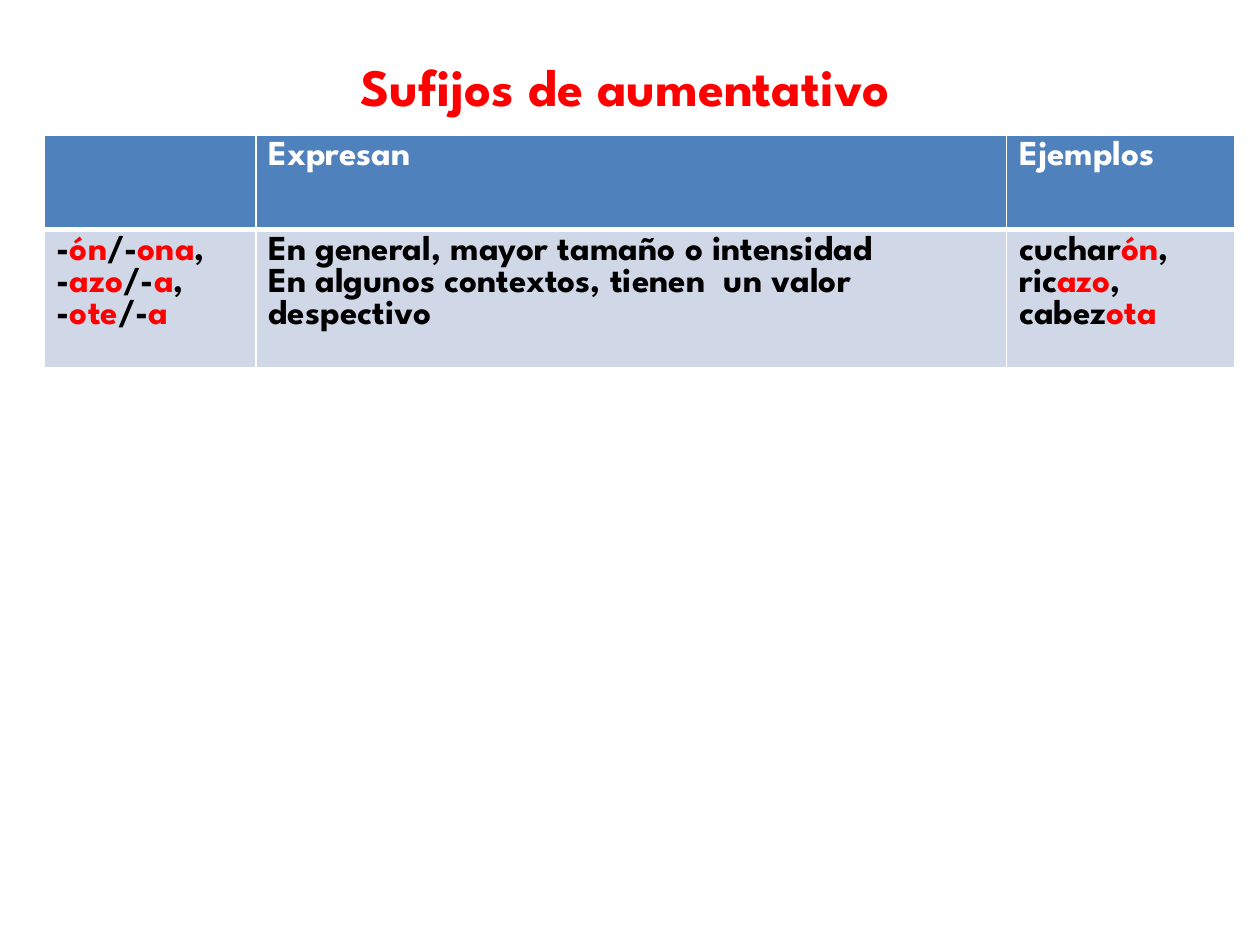
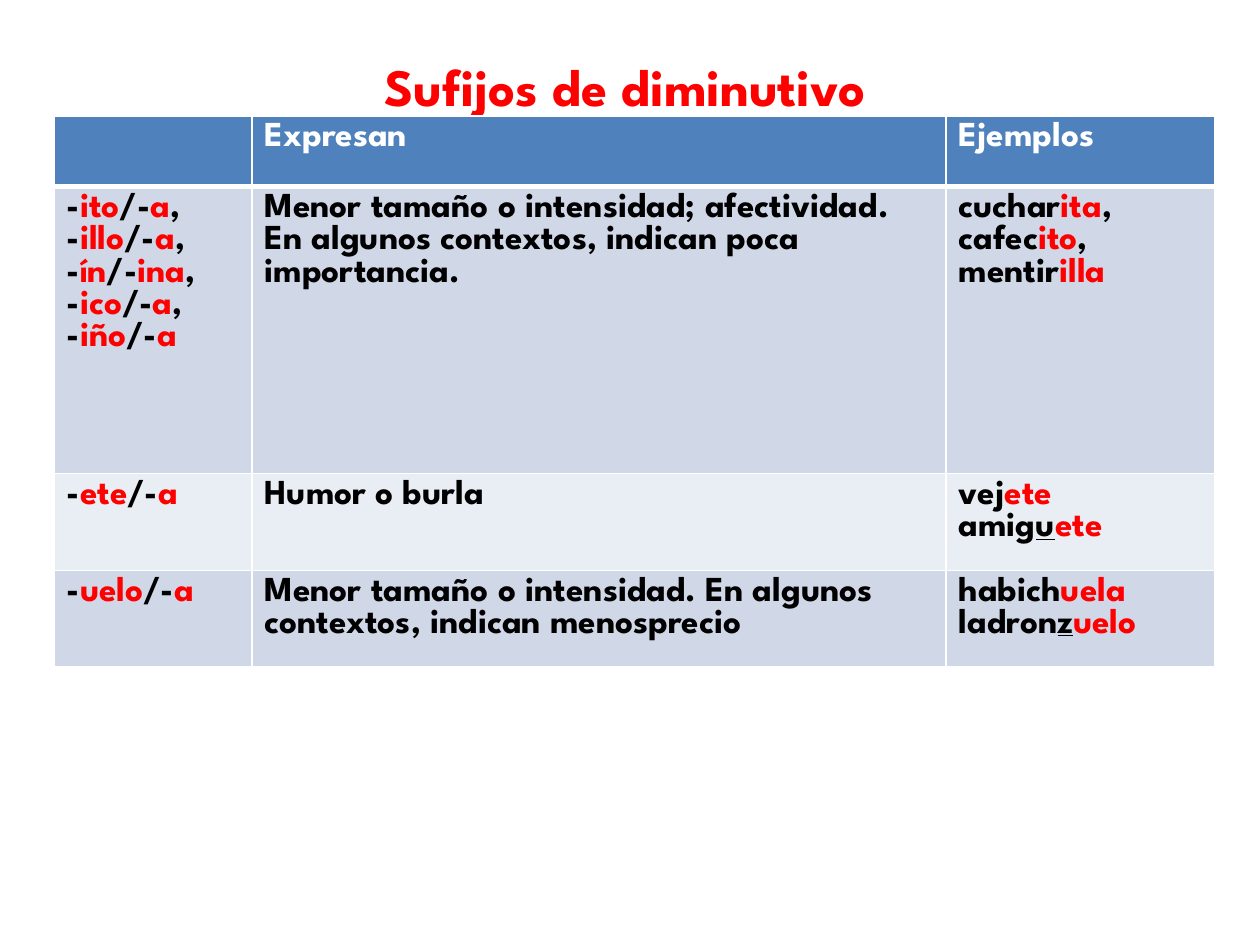
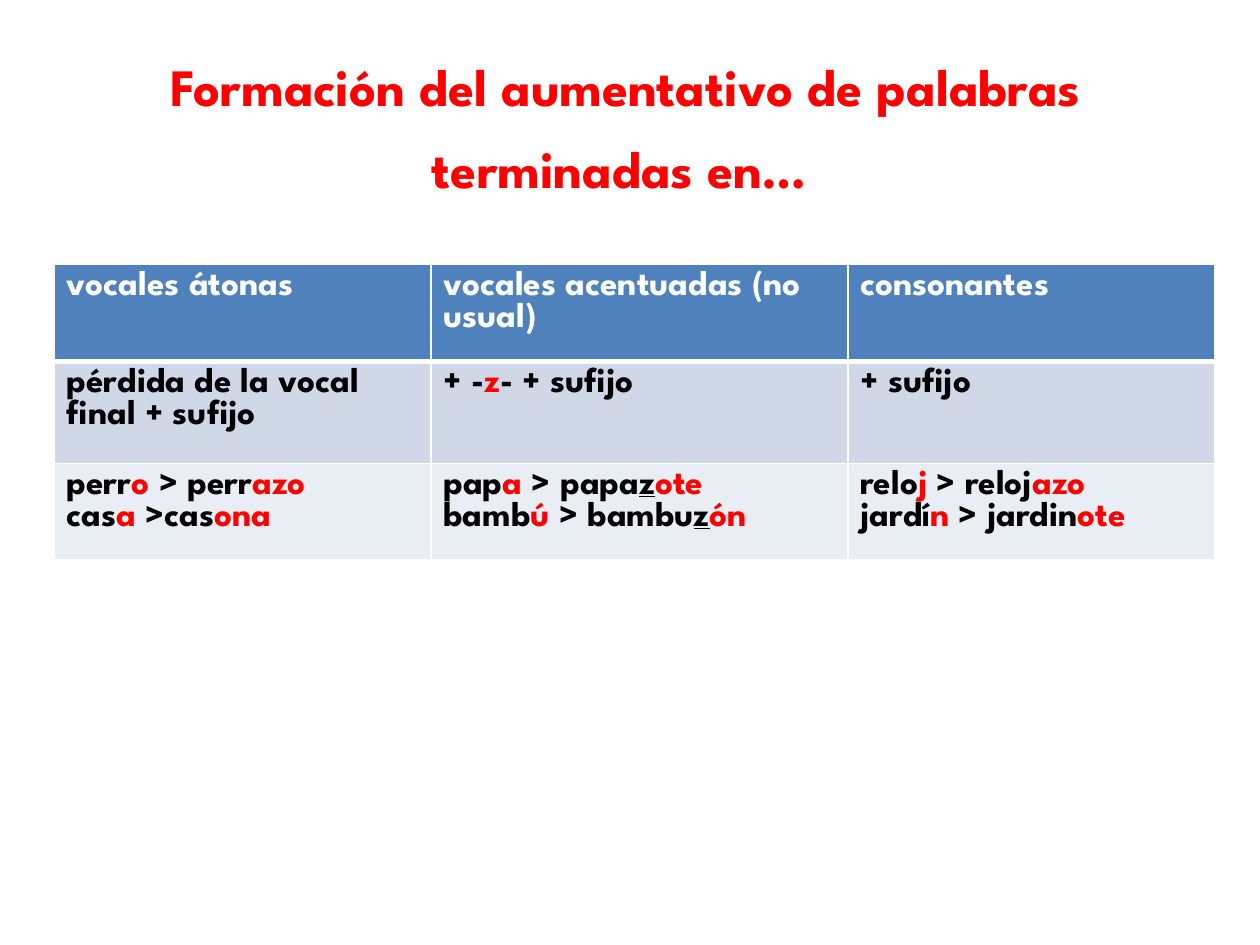
from dataclasses import dataclass

from lxml import etree
from pptx import Presentation
from pptx.dml.color import RGBColor
from pptx.enum.text import MSO_AUTO_SIZE, PP_ALIGN
from pptx.oxml.ns import qn
from pptx.util import Inches, Pt

CENTER = PP_ALIGN.CENTER
GROW = MSO_AUTO_SIZE.SHAPE_TO_FIT_TEXT
GRID_COLS, GRID_ROWS = 100, 75


@dataclass(frozen=True)
class Theme:
    font: str = "League Spartan"
    accent: str = "FF0000"
    text: str = "000000"
    white: str = "FFFFFF"
    header: str = "4F81BD"
    bands: tuple = ("D0D8E8", "E9EDF4")
    title_size: int = 30
    table_size: int = 20
    title_spacing: float = 1.3
    thin: int = 1
    thick: int = 3


class Deck:
    def __init__(self, theme):
        self.theme = theme
        self.prs = Presentation()
        self.prs.slide_width = Inches(10)
        self.prs.slide_height = Inches(7.5)
        self.s = None

    def x(self, cols):
        return round(self.prs.slide_width * cols / GRID_COLS)

    def y(self, rows):
        return round(self.prs.slide_height * rows / GRID_ROWS)

    def slide(self):
        self.s = self.prs.slides.add_slide(self.prs.slide_layouts[6])

    def run(self, p, text, size, color, underline=False):
        r = p.add_run()
        r.text = text
        r.font.name = self.theme.font
        r.font.size = Pt(size)
        r.font.bold = True
        r.font.color.rgb = RGBColor.from_string(color)
        if underline:
            r.font.underline = True

    def marked(self, p, line, color):
        for i, part in enumerate(line.split("*")):
            for j, piece in enumerate(part.split("_")):
                if piece:
                    self.run(p, piece, self.theme.table_size,
                             self.theme.accent if i % 2 else color, j % 2 == 1)

    def title(self, text, height=6.1):
        sp = self.s.shapes.add_textbox(self.x(2.8), self.y(2.3), self.x(93.7), self.y(height))
        tf = sp.text_frame
        tf.word_wrap = True
        tf.auto_size = GROW
        p = tf.paragraphs[0]
        p.alignment = CENTER
        p.line_spacing = self.theme.title_spacing
        self.run(p, text, self.theme.title_size, self.theme.accent)

    def border(self, cell, side, width):
        ln = etree.SubElement(cell._tc.get_or_add_tcPr(), qn(f"a:ln{side}"), w=str(Pt(width)))
        fill = etree.SubElement(ln, qn("a:solidFill"))
        etree.SubElement(fill, qn("a:srgbClr"), val=self.theme.white)

    def cell(self, cell, row, text):
        t = self.theme
        widths = {"L": t.thin, "R": t.thin,
                  "T": t.thick if row == 1 else t.thin,
                  "B": t.thick if row == 0 else t.thin}
        for side, width in widths.items():
            self.border(cell, side, width)
        cell.fill.solid()
        fill = t.bands[(row - 1) % 2] if row else t.header
        cell.fill.fore_color.rgb = RGBColor.from_string(fill)
        tf = cell.text_frame
        for i, line in enumerate(text.split("\n")):
            p = tf.add_paragraph() if i else tf.paragraphs[0]
            self.marked(p, line, t.text if row else t.white)

    def table(self, left, top, widths, heights, rows):
        sp = self.s.shapes.add_table(len(rows), len(widths), self.x(left), self.y(top),
                                     self.x(sum(widths)), self.y(sum(heights)))
        tbl = sp.table
        tbl.horz_banding = False
        for col, width in zip(tbl.columns, widths):
            col.width = self.x(width)
        for i, (height, texts) in enumerate(zip(heights, rows)):
            tbl.rows[i].height = self.y(height)
            for j, text in enumerate(texts):
                self.cell(tbl.cell(i, j), i, text)


def suffixes(*pairs):
    return ",\n".join(f"-*{masculine}*/-*{feminine}*" for masculine, feminine in pairs)


def main():
    deck = Deck(Theme())
    suffix_header = ("", "Expresan", "Ejemplos")

    deck.slide()
    deck.title("Sufijos de aumentativo")
    deck.table(3.5, 10.7, (16.8, 59.6, 18.1), (7.5, 11), (
        suffix_header,
        (suffixes(("ón", "ona"), ("azo", "a"), ("ote", "a")),
         "En general, mayor tamaño o intensidad\n"
         "En algunos contextos, tienen  un valor despectivo",
         "cuchar*ón*, ric*azo*, cabez*ota*"),
    ))

    deck.slide()
    deck.title("Sufijos de diminutivo")
    deck.table(4.3, 9.2, (15.7, 55.1, 21.3), (5.6, 22.8, 7.6, 7.6), (
        suffix_header,
        (suffixes(("ito", "a"), ("illo", "a"), ("ín", "ina"), ("ico", "a"), ("iño", "a")),
         "Menor tamaño o intensidad; afectividad. "
         "En algunos contextos, indican poca importancia.",
         "cuchar*ita*, cafec*ito*, mentir*illa*"),
        (suffixes(("ete", "a")), "Humor o burla", "vej*ete*\namig_u_*ete*"),
        (suffixes(("uelo", "a")),
         "Menor tamaño o intensidad. En algunos contextos, indican menosprecio",
         "habich*uela*\nladron_z_*uelo*"),
    ))

    deck.slide()
    deck.title("Formación del aumentativo de palabras terminadas en… ", 11.1)
    deck.table(4.3, 21, (29.9, 33.1, 29.1), (7.6, 8.1, 7.6), (
        ("vocales átonas", "vocales acentuadas (no usual)", "consonantes"),
        ("pérdida de la vocal final + sufijo", "+ -*z*- + sufijo", "+ sufijo"),
        ("perr*o *> perr*azo*\ncas*a *>cas*ona*",
         "pap*a *> papa_z_*ote*\nbamb*ú *> bambu_z_*ón*",
         "relo*j *> reloj*azo*\njardí*n *> jardin*ote*"),
    ))

    deck.prs.save("out.pptx")


if __name__ == "__main__":
    main()
